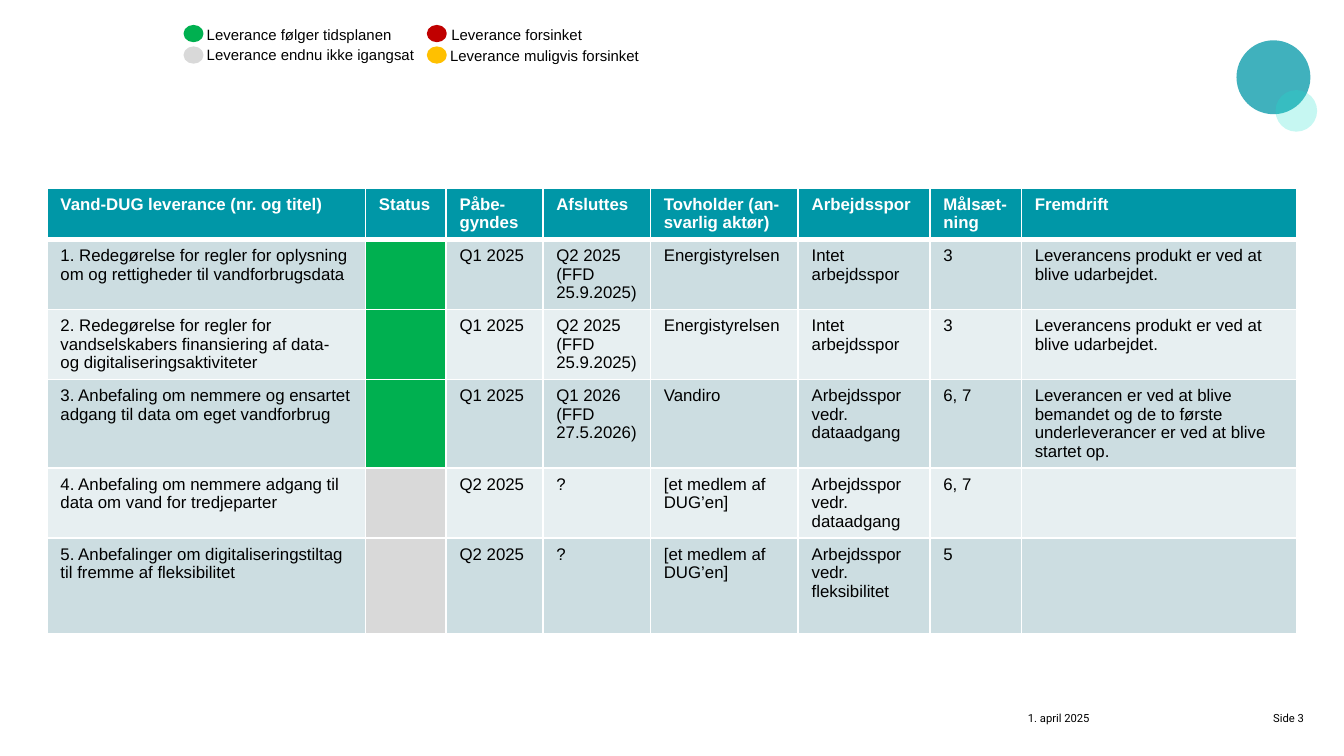
from lxml import etree
from pptx import Presentation
from pptx.dml.color import RGBColor
from pptx.enum.shapes import MSO_SHAPE
from pptx.enum.text import MSO_AUTO_SIZE, PP_ALIGN
from pptx.oxml.ns import qn
from pptx.util import Inches, Pt

COLORS = {
    "teal": "0097A7", "mint": "1DE2CD", "black": "000000", "white": "FFFFFF",
    "band_dark": "CCDDE1", "band_light": "E7EFF1",
    "on_track": "00B050", "not_started": "D9D9D9",
    "delayed": "C00000", "maybe_delayed": "FFC000",
}

COL_WIDTHS = [2.37, 0.6, 0.72, 0.8, 1.1, 0.98, 0.68, 2.05]
ROW_HEIGHTS = [0.37, 0.52, 0.52, 0.66, 0.52, 0.71]
HEADER = ["Vand-DUG leverance (nr. og titel)", "Status", "Påbe-gyndes", "Afsluttes",
          "Tovholder (an-svarlig aktør)", "Arbejdsspor", "Målsæt-ning", "Fremdrift"]
# The status column holds a colour name.
DELIVERIES = [
    ["1. Redegørelse for regler for oplysning\nom og rettigheder til vandforbrugsdata",
     "on_track", "Q1 2025", "Q2 2025\n(FFD 25.9.2025)", "Energistyrelsen",
     "Intet arbejdsspor", "3", "Leverancens produkt er ved at blive udarbejdet."],
    ["2. Redegørelse for regler for vandselskabers finansiering af data- "
     "og digitaliseringsaktiviteter",
     "on_track", "Q1 2025", "Q2 2025\n(FFD 25.9.2025)", "Energistyrelsen",
     "Intet arbejdsspor", "3", "Leverancens produkt er ved at blive udarbejdet."],
    ["3. Anbefaling om nemmere og ensartet adgang til data om eget vandforbrug",
     "on_track", "Q1 2025", "Q1 2026\n(FFD 27.5.2026)", "Vandiro",
     "Arbejdsspor vedr. dataadgang", "6, 7",
     "Leverancen er ved at blive bemandet og de to første underleverancer "
     "er ved at blive startet op."],
    ["4. Anbefaling om nemmere adgang til data om vand for tredjeparter",
     "not_started", "Q2 2025", "?", "[et medlem af DUG’en]",
     "Arbejdsspor vedr. dataadgang", "6, 7", ""],
    ["5. Anbefalinger om digitaliseringstiltag til fremme af fleksibilitet",
     "not_started", "Q2 2025", "?", "[et medlem af DUG’en]",
     "Arbejdsspor vedr. fleksibilitet", "5", ""],
]
LEGEND = [
    (1.38, 0.2, "on_track", 1.44, 0.14, 1.6, "Leverance følger tidsplanen"),
    (1.38, 0.36, "not_started", 1.44, 0.29, 1.77, "Leverance endnu ikke igangsat"),
    (3.19, 0.2, "delayed", 3.26, 0.14, 1.22, "Leverance forsinket"),
    (3.19, 0.36, "maybe_delayed", 3.25, 0.3, 1.62, "Leverance muligvis forsinket"),
]


def rgb(name):
    return RGBColor.from_string(COLORS[name])


def write(tf, text, size=9, font="Arial", color="black", bold=False, align=None):
    """Write one paragraph per line of text."""
    for i, line in enumerate(text.split("\n")):
        p = tf.paragraphs[0] if i == 0 else tf.add_paragraph()
        p.alignment = align
        p.font.size = Pt(size)
        if line:
            r = p.add_run()
            r.text = line
            r.font.name = font
            r.font.size = Pt(size)
            r.font.bold = bold
            r.font.color.rgb = rgb(color)


def set_borders(cell, top=1, bottom=1):
    """Draw white borders, with widths in points."""
    tcPr = cell._tc.get_or_add_tcPr()
    sides = [("lnL", 1), ("lnR", 1), ("lnT", top), ("lnB", bottom)]
    for i, (side, width) in enumerate(sides):
        ln = etree.Element(qn(f"a:{side}"), w=str(Pt(width)))
        fill = etree.SubElement(ln, qn("a:solidFill"))
        etree.SubElement(fill, qn("a:srgbClr"), val=COLORS["white"])
        tcPr.insert(i, ln)


class SlideBuilder:
    def __init__(self, slide):
        self.slide = slide

    def circle(self, x, y, w, h, color, alpha=None, line=None):
        sp = self.slide.shapes.add_shape(
            MSO_SHAPE.OVAL, Inches(x), Inches(y), Inches(w), Inches(h))
        sp.shadow.inherit = False
        sp.fill.solid()
        sp.fill.fore_color.rgb = rgb(color)
        if alpha is not None:
            clr = sp._element.spPr.find(".//" + qn("a:srgbClr"))
            etree.SubElement(clr, qn("a:alpha"), val=str(alpha * 1000))
        if line:
            sp.line.color.rgb = rgb(color)
            sp.line.width = Pt(line)
        else:
            sp.line.fill.background()

    def text(self, x, y, w, h, text, wrap=True, **style):
        box = self.slide.shapes.add_textbox(Inches(x), Inches(y), Inches(w), Inches(h))
        tf = box.text_frame
        tf.word_wrap = wrap
        tf.auto_size = MSO_AUTO_SIZE.NONE if wrap else MSO_AUTO_SIZE.SHAPE_TO_FIT_TEXT
        write(tf, text, **style)

    def table(self, x, y, widths, heights, rows):
        table = self.slide.shapes.add_table(
            len(heights), len(widths), Inches(x), Inches(y),
            Inches(sum(widths)), Inches(sum(heights))).table
        for col, width in zip(table.columns, widths):
            col.width = Inches(width)
        for row, height in zip(table.rows, heights):
            row.height = Inches(height)
        for i, values in enumerate(rows):
            header = i == 0
            band = "teal" if header else "band_dark" if i % 2 else "band_light"
            for j, value in enumerate(values):
                cell = table.cell(i, j)
                status = value in COLORS
                cell.fill.solid()
                cell.fill.fore_color.rgb = rgb(value if status else band)
                set_borders(cell, top=3 if i == 1 else 1, bottom=3 if header else 1)
                write(cell.text_frame, "" if status else value, bold=header,
                      color="white" if header else "black")


def main():
    prs = Presentation()
    prs.slide_width = Inches(10)
    prs.slide_height = prs.slide_width * 9 // 16
    s = SlideBuilder(prs.slides.add_slide(prs.slide_layouts[6]))

    s.circle(9.2, 0.3, 0.55, 0.55, "teal", alpha=75)
    s.circle(9.49, 0.67, 0.31, 0.31, "mint", alpha=25)
    s.text(7.55, 5.24, 1.35, 0.3, "1. april 2025", size=6, font="Roboto")
    s.text(8.92, 5.24, 0.88, 0.3, "Side 3", size=6, font="Roboto", align=PP_ALIGN.RIGHT)

    s.table(0.35, 1.4, COL_WIDTHS, ROW_HEIGHTS, [HEADER] + DELIVERIES)

    for dot_x, dot_y, color, x, y, w, label in LEGEND:
        s.circle(dot_x, dot_y, 0.12, 0.1, color, line=2)
        s.text(x, y, w, 0.24, label, wrap=False, size=8)

    prs.save("out.pptx")


if __name__ == "__main__":
    main()
